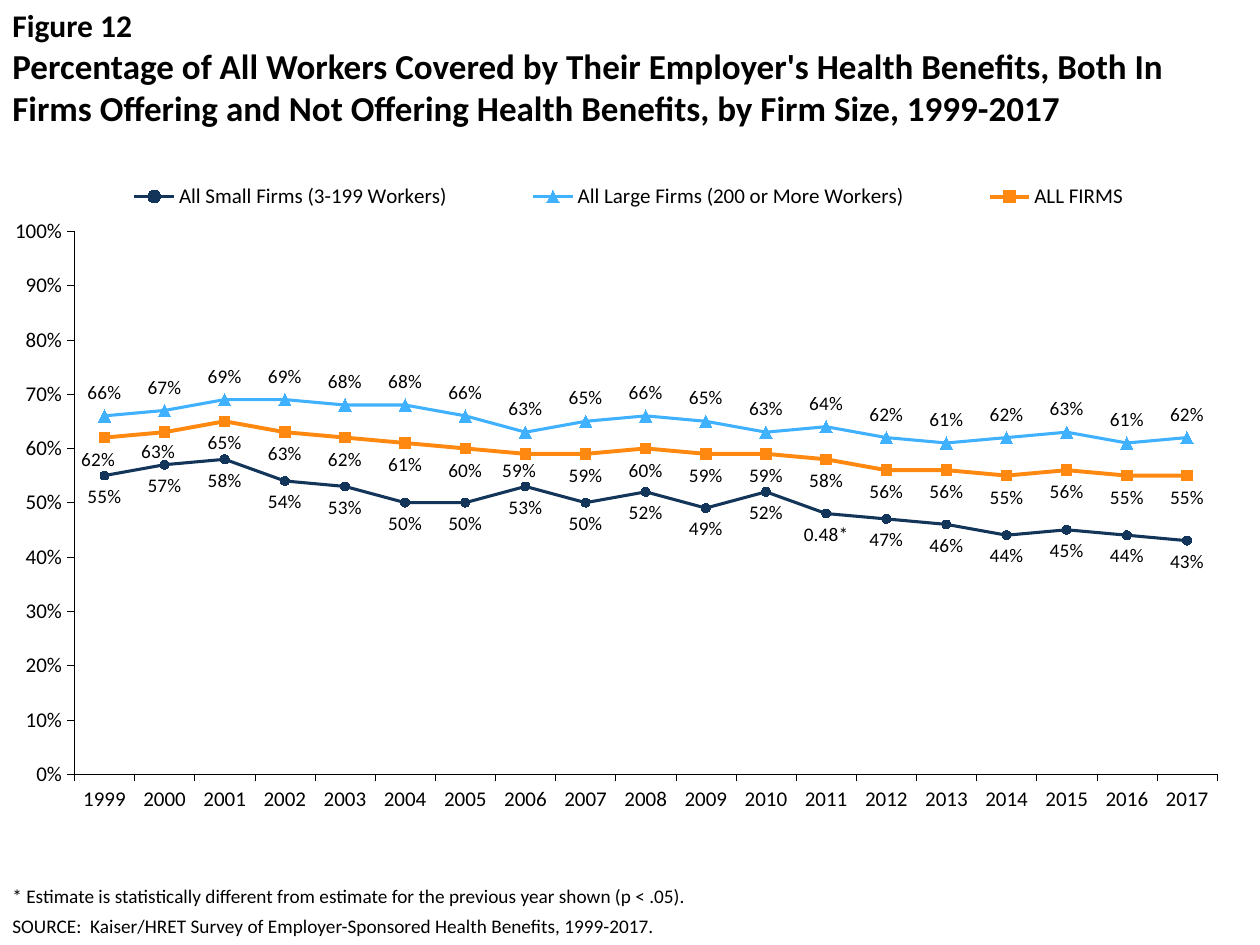
from lxml import etree
from pptx import Presentation
from pptx.chart.data import CategoryChartData
from pptx.dml.color import RGBColor
from pptx.enum.chart import (XL_CHART_TYPE, XL_LABEL_POSITION, XL_LEGEND_POSITION,
                             XL_MARKER_STYLE, XL_TICK_MARK)
from pptx.oxml.ns import qn
from pptx.util import Inches, Pt

LINE_MARKERS = XL_CHART_TYPE.LINE_MARKERS
ABOVE, BELOW = XL_LABEL_POSITION.ABOVE, XL_LABEL_POSITION.BELOW
CIRCLE, TRIANGLE, SQUARE = XL_MARKER_STYLE.CIRCLE, XL_MARKER_STYLE.TRIANGLE, XL_MARKER_STYLE.SQUARE
TOP = XL_LEGEND_POSITION.TOP
OUTSIDE, NO_TICK = XL_TICK_MARK.OUTSIDE, XL_TICK_MARK.NONE

FONT, INK, PERCENT = "Calibri", "000000", "0%"
WIDTH, HEIGHT = 10, 7.5
TITLE = [("Figure 12", 18),
         ("Percentage of All Workers Covered by Their Employer's Health Benefits, Both In "
          "Firms Offering and Not Offering Health Benefits, by Firm Size, 1999-2017", 20)]
NOTES = ["* Estimate is statistically different from estimate for the previous year shown (p < .05).",
         "SOURCE:  Kaiser/HRET Survey of Employer-Sponsored Health Benefits, 1999-2017."]
YEARS = range(1999, 2018)
SERIES = [
    dict(name="All Small Firms (3-199 Workers)", color="133559", weight=1.75,
         marker=CIRCLE, size=5, position=BELOW,
         values=[55, 57, 58, 54, 53, 50, 50, 53, 50, 52, 49, 52, 48, 47, 46, 44, 45, 44, 43]),
    dict(name="All Large Firms (200 or More Workers)", color="40B1FF", weight=1.75,
         marker=TRIANGLE, size=7, position=ABOVE,
         values=[66, 67, 69, 69, 68, 68, 66, 63, 65, 66, 65, 63, 64, 62, 61, 62, 63, 61, 62]),
    dict(name="ALL FIRMS", color="FF8811", weight=2.25,
         marker=SQUARE, size=6, position=BELOW,
         values=[62, 63, 65, 63, 62, 61, 60, 59, 59, 60, 59, 59, 58, 56, 56, 55, 56, 55, 55]),
]
STARRED_YEAR, STARRED_TEXT = 2011, "0.48*"
LABEL_SHIFTS = {1999: (-0.005, 0), 2000: (-0.005, -0.003), 2006: (-0.005, -0.008)}


def rgb(value):
    """Turn a hex string into a colour."""
    return RGBColor.from_string(value)


def style(font, size, bold=False):
    """Set the common typeface and ink on a font."""
    font.name, font.size, font.bold = FONT, Pt(size), bold
    font.color.rgb = rgb(INK)


def add_span(para, text, size, bold=False):
    """Add one styled run."""
    span = para.add_run()
    span.text = text
    style(span.font, size, bold)


def add_box(page, left, top, width, height):
    """Add a wrapping text box and return its text frame."""
    box = page.shapes.add_textbox(*map(Inches, (left, top, width, height)))
    box.text_frame.word_wrap = True
    return box.text_frame


def set_layout(parent, index, **settings):
    """Give a chart element a manual layout, as its child number index."""
    for old in parent.findall(qn("c:layout")):
        parent.remove(old)
    layout = etree.Element(qn("c:layout"))
    manual = etree.SubElement(layout, qn("c:manualLayout"))
    for key, value in settings.items():
        etree.SubElement(manual, qn("c:" + key)).set("val", str(value))
    parent.insert(index, layout)


def style_series(line, spec_row):
    """Style a line, its markers and its labels."""
    color = rgb(spec_row["color"])
    line.smooth = False
    line.format.line.width = Pt(spec_row["weight"])
    line.format.line.color.rgb = color
    line.marker.style, line.marker.size = spec_row["marker"], spec_row["size"]
    line.marker.format.fill.solid()
    line.marker.format.fill.fore_color.rgb = color
    line.marker.format.line.color.rgb = color
    labels = line.data_labels
    labels.show_value, labels.position = True, spec_row["position"]
    labels.number_format, labels.number_format_is_linked = PERCENT, False
    style(labels.font, 11)


def add_chart(page):
    """Add the line chart with its legend, axes and special labels."""
    data = CategoryChartData(number_format=PERCENT)
    data.categories = [str(year) for year in YEARS]
    for row in SERIES:
        data.add_series(row["name"], [value / 100 for value in row["values"]])
    frame = page.shapes.add_chart(LINE_MARKERS, 0, Inches(1.42), Inches(WIDTH), Inches(5.08), data)
    chart = frame.chart
    chart.has_title = False
    style(chart.font, 11)
    chart.plots[0].vary_by_categories = False
    for line, row in zip(chart.plots[0].series, SERIES):
        style_series(line, row)

    small, _, every = chart.plots[0].series
    starred = small.points[YEARS.index(STARRED_YEAR)].data_label
    add_span(starred.text_frame.paragraphs[0], STARRED_TEXT, 11)
    starred.position = BELOW
    for year, (x, y) in LABEL_SHIFTS.items():
        label = every.points[YEARS.index(year)].data_label
        style(label.font, 11)
        label.position = BELOW
    for element, (x, y) in zip(every.data_labels._element.findall(qn("c:dLbl")),
                               LABEL_SHIFTS.values()):
        set_layout(element, 1, x=x, y=y)

    for axis in (chart.category_axis, chart.value_axis):
        axis.has_major_gridlines = False
        axis.major_tick_mark, axis.minor_tick_mark = OUTSIDE, NO_TICK
        axis.format.line.width = Pt(0.25)
        axis.format.line.color.rgb = rgb(INK)
        style(axis.tick_labels.font, 12)
    scale = chart.value_axis
    scale.minimum_scale, scale.maximum_scale, scale.major_unit = 0, 1, 0.1
    scale.tick_labels.number_format = PERCENT
    scale.tick_labels.number_format_is_linked = False

    chart.has_legend = True
    chart.legend.position, chart.legend.include_in_layout = TOP, False
    style(chart.legend.font, 12)
    set_layout(chart.legend._element, 1, xMode="edge", yMode="edge", x=0.044, y=0, w=0.91, h=0.055)
    set_layout(chart.plots[0]._element.getparent(), 0, layoutTarget="inner", xMode="edge",
               yMode="edge", x=0.059, y=0.082, w=0.907, h=0.848)


def main():
    """Build the slide and save it."""
    deck = Presentation()
    deck.slide_width, deck.slide_height = Inches(WIDTH), Inches(HEIGHT)
    page = deck.slides.add_slide(deck.slide_layouts[6])
    add_chart(page)
    title = add_box(page, 0, 0, 9.58, 0.92).paragraphs[0]
    for number, (text, size) in enumerate(TITLE):
        if number:
            title.add_line_break()
        add_span(title, text, size, True)
    notes = add_box(page, 0, 6.97, 9.17, 0.53)
    for number, text in enumerate(NOTES):
        para = notes.add_paragraph() if number else notes.paragraphs[0]
        para.space_after = Pt(4)
        add_span(para, text, 11)
    deck.save("out.pptx")


if __name__ == "__main__":
    main()
